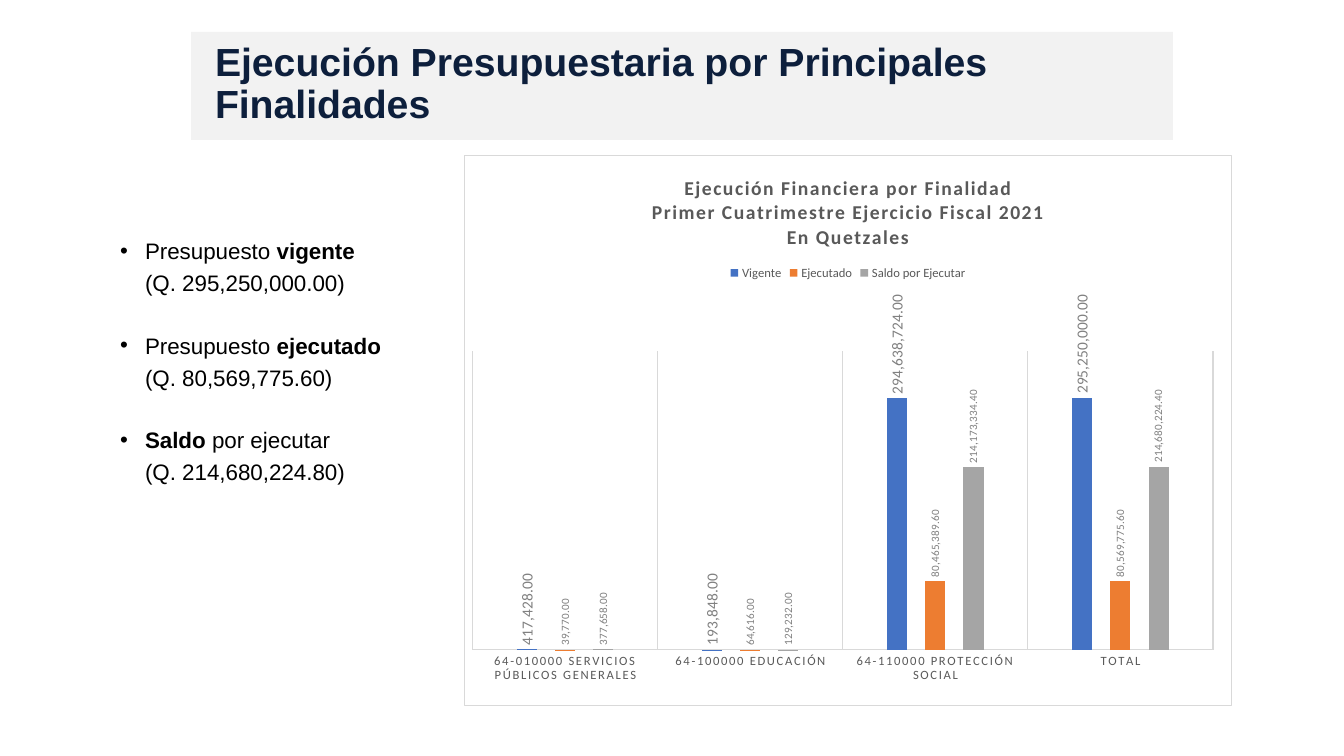
from lxml import etree
from pptx import Presentation
from pptx.chart.data import CategoryChartData
from pptx.dml.color import RGBColor
from pptx.enum.chart import (XL_CHART_TYPE, XL_LABEL_POSITION as LabelPos,
                             XL_LEGEND_POSITION as LegendPos, XL_TICK_MARK as Tick)
from pptx.enum.shapes import MSO_SHAPE
from pptx.enum.text import MSO_ANCHOR
from pptx.oxml import parse_xml
from pptx.oxml.ns import nsdecls, qn
from pptx.util import Emu, Pt

NAVY = RGBColor(0x0D, 0x1F, 0x3C)
BLACK = RGBColor(0, 0, 0)
BAND = RGBColor(0xF2, 0xF2, 0xF2)
WHITE = RGBColor(0xFF, 0xFF, 0xFF)
RULE = RGBColor(0xD9, 0xD9, 0xD9)
DARK_GRAY = RGBColor(0x59, 0x59, 0x59)
LABEL_GRAY = RGBColor(0x80, 0x80, 0x80)
BLUE = RGBColor(0x44, 0x72, 0xC4)
ORANGE = RGBColor(0xED, 0x7D, 0x31)
GRAY = RGBColor(0xA5, 0xA5, 0xA5)

NUMBER_FORMAT = "#,##0.00"
TITLE = "Ejecución Presupuestaria por Principales Finalidades"
# Each bullet is a list of (text, bold) runs
BULLETS = [
    [("Presupuesto ", False), ("vigente", True), ("\v(Q. 295,250,000.00)", False)],
    [("Presupuesto ", False), ("ejecutado", True), ("\v(Q. 80,569,775.60)", False)],
    [("Saldo", True), (" por ejecutar\v(Q. 214,680,224.80)", False)],
]
CHART_TITLE = ("Ejecución Financiera por Finalidad\n"
               "Primer Cuatrimestre Ejercicio Fiscal 2021\nEn Quetzales")
CATEGORIES = ["64-010000 SERVICIOS PÚBLICOS GENERALES", "64-100000 EDUCACIÓN",
              "64-110000 PROTECCIÓN SOCIAL", "TOTAL"]
# Name, values, colour, label size
SERIES = [
    ("Vigente", [417428, 193848, 294638724, 295250000], BLUE, 11),
    ("Ejecutado", [39770, 64616, 80465389.6, 80569775.6], ORANGE, 8),
    ("Saldo por Ejecutar", [377658, 129232, 214173334.4, 214680224.4], GRAY, 8),
]


def px(n):
    return Emu(round(n * 914400 / 100.8))


def style_font(font, color, **values):
    for name, value in values.items():
        setattr(font, name, value)
    font.color.rgb = color


def add_text_frame(slide, x, y, w, h, **values):
    tf = slide.shapes.add_textbox(px(x), px(y), px(w), px(h)).text_frame
    values = dict(word_wrap=True, margin_left=0, margin_right=0,
                  margin_top=0, margin_bottom=0) | values
    for name, value in values.items():
        setattr(tf, name, value)
    return tf


def add_header(slide, x, y, w, h):
    band = slide.shapes.add_shape(MSO_SHAPE.RECTANGLE, px(x), px(y), px(w), px(h))
    band.shadow.inherit = False
    band.fill.solid()
    band.fill.fore_color.rgb = BAND
    band.line.fill.background()
    tf = add_text_frame(slide, x + 24, y, w - 37, h - 2, vertical_anchor=MSO_ANCHOR.MIDDLE)
    p = tf.paragraphs[0]
    p.line_spacing = 0.9
    r = p.add_run()
    r.text = TITLE
    style_font(r.font, NAVY, name="Arial", size=Pt(28), bold=True)


def add_bullets(slide, x, y, w, h):
    tf = add_text_frame(slide, x, y, w, h)
    for i, runs in enumerate(BULLETS):
        p = tf.paragraphs[0] if i == 0 else tf.add_paragraph()
        p.line_spacing = 1.19
        p.space_before = Pt(22 if i else 0)
        pPr = p._p.get_or_add_pPr()
        pPr.set("marL", str(px(25)))
        pPr.set("indent", str(-px(25)))
        pPr.append(parse_xml(f'<a:buFont {nsdecls("a")} typeface="Arial"/>'))
        pPr.append(parse_xml(f'<a:buChar {nsdecls("a")} char="•"/>'))
        for text, bold in runs:
            # A vertical tab splits a run with a line break
            for j, part in enumerate(text.split("\v")):
                if j:
                    p.add_line_break()
                if part:
                    r = p.add_run()
                    r.text = part
                    style_font(r.font, BLACK, name="Arial", size=Pt(16), bold=bold)


def frame_chart(chart):
    """Chart background, border and inner plot position."""
    chart._chartSpace.chart.addnext(parse_xml(
        f'<c:spPr {nsdecls("c", "a")}><a:solidFill><a:srgbClr val="{WHITE}"/></a:solidFill>'
        f'<a:ln w="{Pt(0.75)}"><a:solidFill><a:srgbClr val="{RULE}"/></a:solidFill></a:ln></c:spPr>'))
    plot_area = chart._chartSpace.chart.plotArea
    for old in plot_area.findall(qn("c:layout")):
        plot_area.remove(old)
    layout = parse_xml(f'<c:layout {nsdecls("c")}><c:manualLayout/></c:layout>')
    settings = dict(layoutTarget="inner", xMode="edge", yMode="edge",
                    x=0.011, y=0.356, w=0.965, h=0.543)
    for name, value in settings.items():
        etree.SubElement(layout[0], qn(f"c:{name}")).set("val", str(value))
    plot_area.insert(0, layout)


def style_axes(chart):
    axis = chart.category_axis
    axis.major_tick_mark = axis.minor_tick_mark = Tick.NONE
    axis.has_major_gridlines = True
    for line in (axis.format.line, axis.major_gridlines.format.line):
        line.color.rgb = RULE
        line.width = Pt(0.75)
    font = axis.tick_labels.font
    style_font(font, DARK_GRAY, name="Calibri", size=Pt(9), bold=False)
    font._element.set("spc", "120")

    axis = chart.value_axis
    axis.visible = False
    axis.has_major_gridlines = False
    axis.minimum_scale, axis.maximum_scale = 0, 350000000
    axis.tick_labels.number_format = NUMBER_FORMAT
    axis.tick_labels.number_format_is_linked = False


def style_series(series, color, label_size):
    series.format.fill.solid()
    series.format.fill.fore_color.rgb = color
    series.invert_if_negative = False
    labels = series.data_labels
    for name, value in dict(show_value=True, position=LabelPos.OUTSIDE_END,
                            number_format=NUMBER_FORMAT,
                            number_format_is_linked=False).items():
        setattr(labels, name, value)
    style_font(labels.font, LABEL_GRAY, name="Calibri", size=Pt(label_size))
    # Labels read upwards
    body = labels._element.find(qn("c:txPr")).find(qn("a:bodyPr"))
    body.set("rot", "-5400000")
    body.set("vert", "horz")


def add_budget_chart(slide, x, y, w, h):
    data = CategoryChartData(number_format=NUMBER_FORMAT)
    data.categories = CATEGORIES
    for name, values, *_ in SERIES:
        data.add_series(name, values)
    chart = slide.shapes.add_chart(XL_CHART_TYPE.COLUMN_CLUSTERED,
                                   px(x), px(y), px(w), px(h), data).chart
    style_font(chart.font, BLACK, name="Calibri", size=Pt(10))
    frame_chart(chart)

    # Title and legend
    chart.has_title = True
    chart.chart_title.include_in_layout = False
    tf = chart.chart_title.text_frame
    tf.text = CHART_TITLE
    for p in tf.paragraphs:
        for r in p.runs:
            style_font(r.font, DARK_GRAY, name="Calibri", size=Pt(14), bold=True)
            r.font._element.set("spc", "100")
    chart.has_legend = True
    chart.legend.position = LegendPos.TOP
    chart.legend.include_in_layout = False
    style_font(chart.legend.font, DARK_GRAY, name="Calibri", size=Pt(9))

    # Columns
    style_axes(chart)
    plot = chart.plots[0]
    for name, value in dict(gap_width=444, overlap=-90, vary_by_categories=False).items():
        setattr(plot, name, value)
    for series, (_, _, color, label_size) in zip(plot.series, SERIES):
        style_series(series, color, label_size)


def main():
    prs = Presentation()
    prs.slide_width, prs.slide_height = px(1344), px(756)
    slide = prs.slides.add_slide(prs.slide_layouts[6])
    add_header(slide, 191, 32, 982, 108)
    add_bullets(slide, 120, 232, 340, 260)
    add_budget_chart(slide, 464, 155, 768, 551)
    prs.save("out.pptx")


if __name__ == "__main__":
    main()
